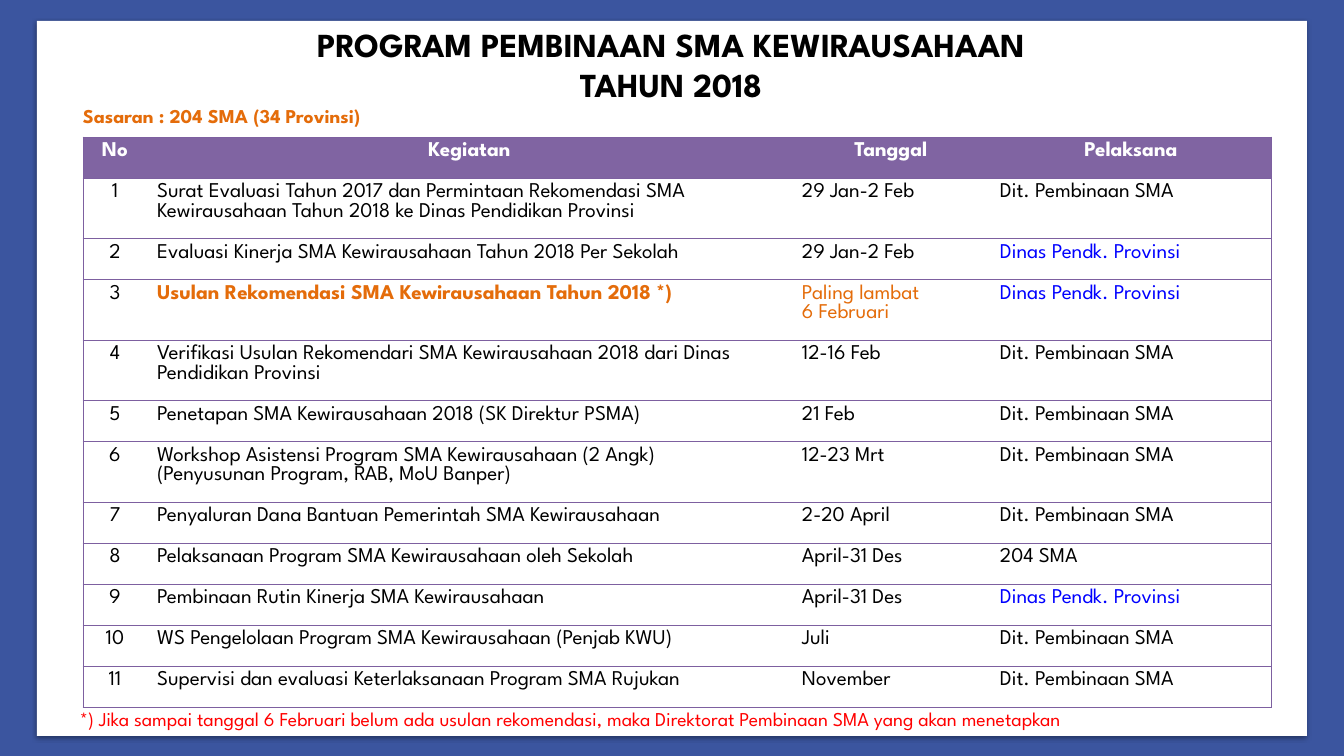
import pptx
import pptx.util
import pptx.dml.color
import pptx.enum.shapes
import pptx.enum.text
from lxml import etree
from pptx.oxml.ns import qn

TITLE = ["PROGRAM PEMBINAAN SMA KEWIRAUSAHAAN", "TAHUN 2018"]
TARGET = ["Sasaran : 204 SMA (34 Provinsi)"]
FOOTNOTE = ["*) Jika sampai tanggal 6 Februari belum ada usulan rekomendasi, "
            "maka Direktorat Pembinaan SMA yang akan menetapkan"]
HEADER = ("No", "Kegiatan", "Tanggal", "Pelaksana")
DIRECTORATE = "Dit. Pembinaan SMA"
PROVINCE = "Dinas Pendk. Provinsi"
ACTIVITIES = [
    ("Surat Evaluasi Tahun 2017 dan Permintaan Rekomendasi SMA Kewirausahaan Tahun 2018 "
     "ke Dinas Pendidikan Provinsi", "29 Jan-2 Feb", DIRECTORATE),
    ("Evaluasi Kinerja SMA Kewirausahaan Tahun 2018 Per Sekolah", "29 Jan-2 Feb", PROVINCE),
    ("Usulan Rekomendasi SMA Kewirausahaan Tahun 2018 *)", "Paling lambat\n6 Februari", PROVINCE),
    ("Verifikasi Usulan Rekomendari SMA Kewirausahaan 2018 dari Dinas Pendidikan Provinsi",
     "12-16 Feb", DIRECTORATE),
    ("Penetapan SMA Kewirausahaan 2018 (SK Direktur PSMA)", "21 Feb", DIRECTORATE),
    ("Workshop Asistensi Program SMA Kewirausahaan (2 Angk)\n(Penyusunan Program, RAB, MoU Banper)",
     "12-23 Mrt", DIRECTORATE),
    ("Penyaluran Dana Bantuan Pemerintah SMA Kewirausahaan", "2-20 April", DIRECTORATE),
    ("Pelaksanaan Program SMA Kewirausahaan oleh Sekolah", "April-31 Des", "204 SMA"),
    ("Pembinaan Rutin Kinerja SMA Kewirausahaan", "April-31 Des", PROVINCE),
    ("WS Pengelolaan Program SMA Kewirausahaan (Penjab KWU)", "Juli", DIRECTORATE),
    ("Supervisi dan evaluasi Keterlaksanaan Program SMA Rujukan", "November", DIRECTORATE),
]
HIGHLIGHTED = 3
TWO_LINE_ROWS = {1, 3, 4, 6}
COLUMN_WIDTHS = (64, 645, 198, 282)
ROW_HEIGHT, TALL_ROW_HEIGHT = 41, 60
THEME = {
    "font": "League Spartan", "frame": "3B559F", "white": "FFFFFF", "black": "000000",
    "header": "8064A2", "border": "7D60A0", "accent": "E46C0A", "province": "0000FF",
    "note": "FF0000", "title_size": 24, "table_size": 15, "note_size": 14,
    "border_width": 0.75,
}
PX = 914400 / 100.8
ALIGN = pptx.enum.text.PP_ALIGN


def px(length):
    return round(length * PX)


def rgb(name):
    return pptx.dml.color.RGBColor.from_string(THEME[name])


def write(frame, lines, size, color, bold=False, align=ALIGN.LEFT):
    for index, line in enumerate(lines):
        para = frame.add_paragraph() if index else frame.paragraphs[0]
        para.alignment = align
        span = para.add_run()
        span.text = line
        span.font.name = THEME["font"]
        span.font.size = pptx.util.Pt(THEME[size])
        span.font.bold = bold
        span.font.color.rgb = rgb(color)


def add_panel(page, place, color):
    panel = page.shapes.add_shape(pptx.enum.shapes.MSO_SHAPE.RECTANGLE, *map(px, place))
    panel.shadow.inherit = False
    panel.fill.solid()
    panel.fill.fore_color.rgb = rgb(color)
    panel.line.fill.background()
    return panel


def add_shadow(panel):
    effects = panel._element.spPr.find(qn("a:effectLst"))
    shadow = etree.SubElement(effects, qn("a:outerShdw"), blurRad=str(pptx.util.Pt(3.1)),
                              dist=str(pptx.util.Pt(1.6)), dir="5400000", rotWithShape="0")
    color = etree.SubElement(shadow, qn("a:srgbClr"), val=THEME["black"])
    etree.SubElement(color, qn("a:alpha"), val="38000")


def add_text(page, place, lines, size, color, bold=False, align=ALIGN.LEFT, wrap=False):
    box = page.shapes.add_textbox(*map(px, place))
    box.text_frame.word_wrap = wrap
    write(box.text_frame, lines, size, color, bold, align)


def set_borders(cell, sides):
    properties = cell._tc.get_or_add_tcPr()
    for index, side in enumerate(sides):
        line = etree.Element(qn(f"a:{side}"), w=str(pptx.util.Pt(THEME["border_width"])))
        fill = etree.SubElement(line, qn("a:solidFill"))
        etree.SubElement(fill, qn("a:srgbClr"), val=THEME["border"])
        properties.insert(index, line)


def cell_style(row, column):
    if row == 0:
        return "white", True
    if row == HIGHLIGHTED and column in (1, 2):
        return "accent", column == 1
    return "black", False


def add_schedule(page, left, top):
    rows = [HEADER] + [(str(number), *activity) for number, activity in enumerate(ACTIVITIES, 1)]
    heights = [TALL_ROW_HEIGHT if row in TWO_LINE_ROWS else ROW_HEIGHT for row in range(len(rows))]
    place = map(px, (left, top, sum(COLUMN_WIDTHS), sum(heights)))
    shape = page.shapes.add_table(len(rows), len(HEADER), *place)
    table = shape.table
    table.horz_banding = False
    table._tbl.tblPr.find(qn("a:tableStyleId")).text = "{2D5ABB26-0587-4C30-8999-92F81FD0307C}"
    for column, width in enumerate(COLUMN_WIDTHS):
        table.columns[column].width = px(width)
    for row, values in enumerate(rows):
        table.rows[row].height = px(heights[row])
        for column, value in enumerate(values):
            cell = table.cell(row, column)
            color, bold = cell_style(row, column)
            if value == PROVINCE:
                color = "province"
            centered = row == 0 or column == 0
            write(cell.text_frame, value.split("\n"), "table_size", color, bold,
                  ALIGN.CENTER if centered else ALIGN.LEFT)
            if row == 0:
                cell.fill.solid()
                cell.fill.fore_color.rgb = rgb("header")
            else:
                cell.fill.background()
            outer = {0: ["lnL"], len(HEADER) - 1: ["lnR"]}.get(column, [])
            set_borders(cell, outer + ["lnT", "lnB"])


def main():
    deck = pptx.Presentation()
    deck.slide_width, deck.slide_height = px(1344), px(756)
    page = deck.slides.add_slide(deck.slide_layouts[6])
    add_panel(page, (0, 0, 1344, 756), "frame")
    add_shadow(add_panel(page, (37, 21, 1270, 715), "white"))
    add_text(page, (283, 19, 776, 92), TITLE, "title_size", "black", True, ALIGN.CENTER)
    add_schedule(page, 83, 137)
    add_text(page, (70, 702, 1247, 34), FOOTNOTE, "note_size", "note", wrap=True)
    add_text(page, (73, 99, 314, 34), TARGET, "note_size", "accent", True)
    deck.save("out.pptx")


if __name__ == "__main__":
    main()
